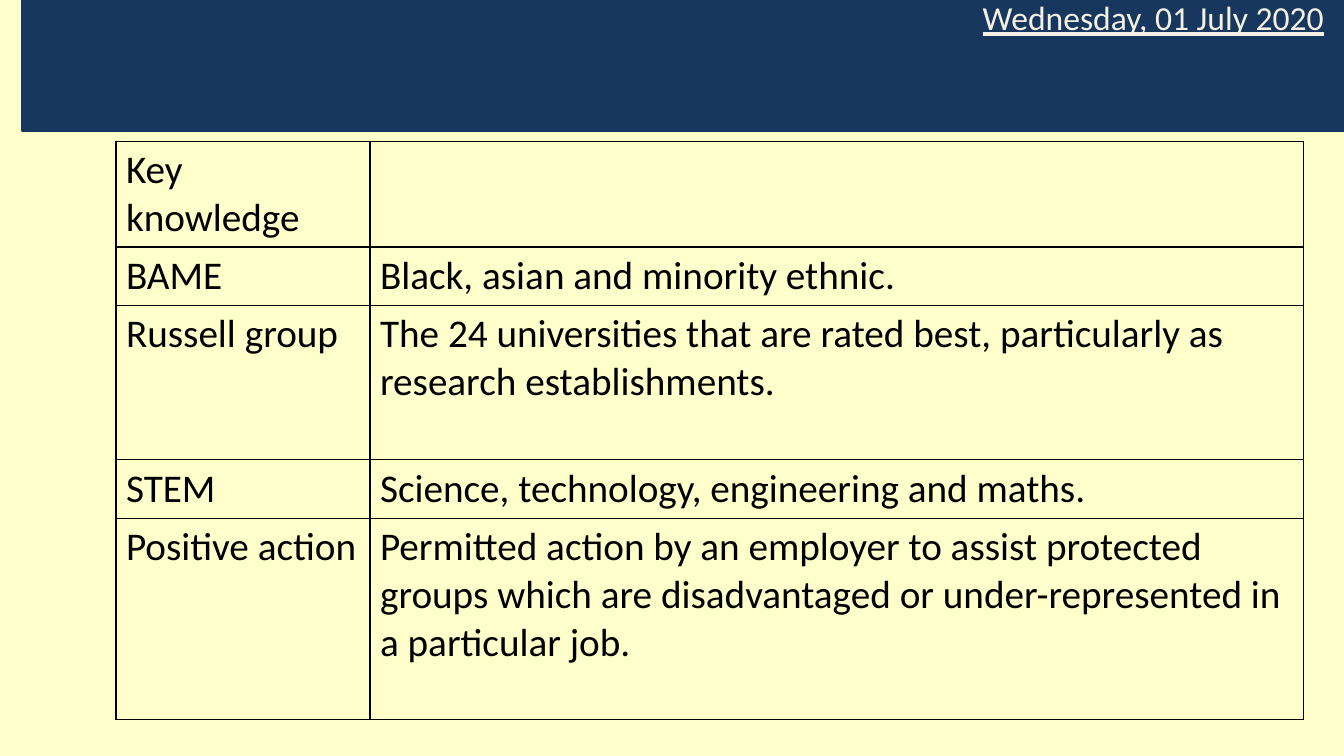
"""Build a slide with a dated banner and a key knowledge glossary table."""
from typing import NamedTuple

from lxml.etree import SubElement
from pptx import Presentation
from pptx.dml.color import RGBColor
from pptx.enum.shapes import MSO_SHAPE
from pptx.enum.text import MSO_ANCHOR, MSO_AUTO_SIZE, PP_ALIGN
from pptx.oxml.ns import qn
from pptx.util import Inches, Pt

CREAM = RGBColor(0xFF, 0xFF, 0xCC)
NAVY = RGBColor(0x17, 0x37, 0x5E)
IVORY = RGBColor(0xF4, 0xF1, 0xE3)
BLACK = RGBColor(0, 0, 0)
FONT = "Calibri"


class Entry(NamedTuple):
    term: str
    meaning: str
    height: float


ENTRIES = [
    Entry("Key knowledge", "", 1.05),
    Entry("BAME", "Black, asian and minority ethnic.", 0.58),
    Entry(
        "Russell group",
        "The 24 universities that are rated best, particularly as research establishments.",
        1.53,
    ),
    Entry("STEM", "Science, technology, engineering and maths.", 0.58),
    Entry(
        "Positive action",
        "Permitted action by an employer to assist protected groups which are "
        "disadvantaged or under-represented in a particular job.",
        2.0,
    ),
]
COLUMN_WIDTHS = (2.52, 9.26)


def write_text(text_frame, text: str, *, size: float, color: RGBColor,
               align=PP_ALIGN.LEFT, underline: bool = False) -> None:
    paragraph = text_frame.paragraphs[0]
    paragraph.text = text
    paragraph.alignment = align
    font = paragraph.font
    font.name, font.size, font.underline = FONT, Pt(size), underline
    font.color.rgb = color


def add_banner(slide):
    banner = slide.shapes.add_shape(
        MSO_SHAPE.RECTANGLE, Inches(0.22), Inches(-0.05), Inches(13.11), Inches(1.35))
    banner.shadow.inherit = False
    banner.fill.solid()
    banner.fill.fore_color.rgb = NAVY
    banner.line.color.rgb = NAVY
    banner.line.width = Pt(1)
    return banner


def place_date(slide, banner) -> None:
    title = slide.shapes.title
    title.left, title.top = Inches(6.98), Inches(-0.08)
    title.width, title.height = Inches(6.25), Inches(0.4)
    text_frame = title.text_frame
    text_frame.word_wrap = True
    text_frame.auto_size = MSO_AUTO_SIZE.NONE
    text_frame.vertical_anchor = MSO_ANCHOR.TOP
    write_text(text_frame, "Wednesday, 01 July 2020", size=24, color=IVORY,
               align=PP_ALIGN.RIGHT, underline=True)
    banner.element.addnext(title.element)


def format_cell(cell, text: str) -> None:
    write_text(cell.text_frame, text, size=28, color=BLACK)
    properties = cell._tc.get_or_add_tcPr()
    for side in ("a:lnL", "a:lnR", "a:lnT", "a:lnB"):
        border = SubElement(properties, qn(side), w=str(Pt(1)))
        fill = SubElement(border, qn("a:solidFill"))
        SubElement(fill, qn("a:srgbClr"), val=str(BLACK))
    cell.fill.background()


def add_glossary(slide, entries: list[Entry]) -> None:
    height = sum(entry.height for entry in entries)
    table = slide.shapes.add_table(
        len(entries), len(COLUMN_WIDTHS), Inches(1.15), Inches(1.4),
        Inches(sum(COLUMN_WIDTHS)), Inches(height)).table
    table.first_row = table.horz_banding = False
    for column, width in zip(table.columns, COLUMN_WIDTHS):
        column.width = Inches(width)
    for row, entry in zip(table.rows, entries):
        row.height = Inches(entry.height)
        for cell, text in zip(row.cells, (entry.term, entry.meaning)):
            format_cell(cell, text)


def main() -> None:
    presentation = Presentation()
    presentation.slide_width = Inches(13.33)
    presentation.slide_height = Inches(7.5)
    slide = presentation.slides.add_slide(presentation.slide_layouts[5])
    slide.background.fill.solid()
    slide.background.fill.fore_color.rgb = CREAM
    banner = add_banner(slide)
    place_date(slide, banner)
    add_glossary(slide, ENTRIES)
    presentation.save("out.pptx")


if __name__ == "__main__":
    main()
